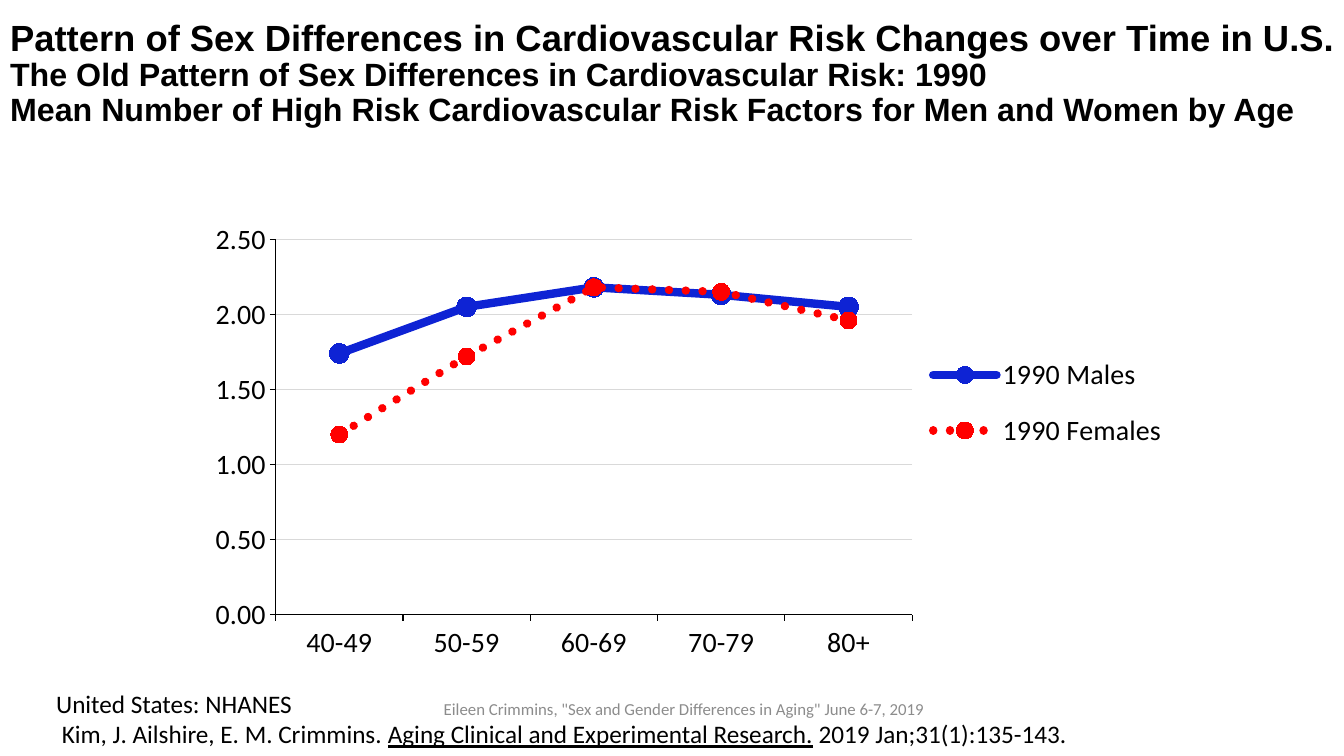
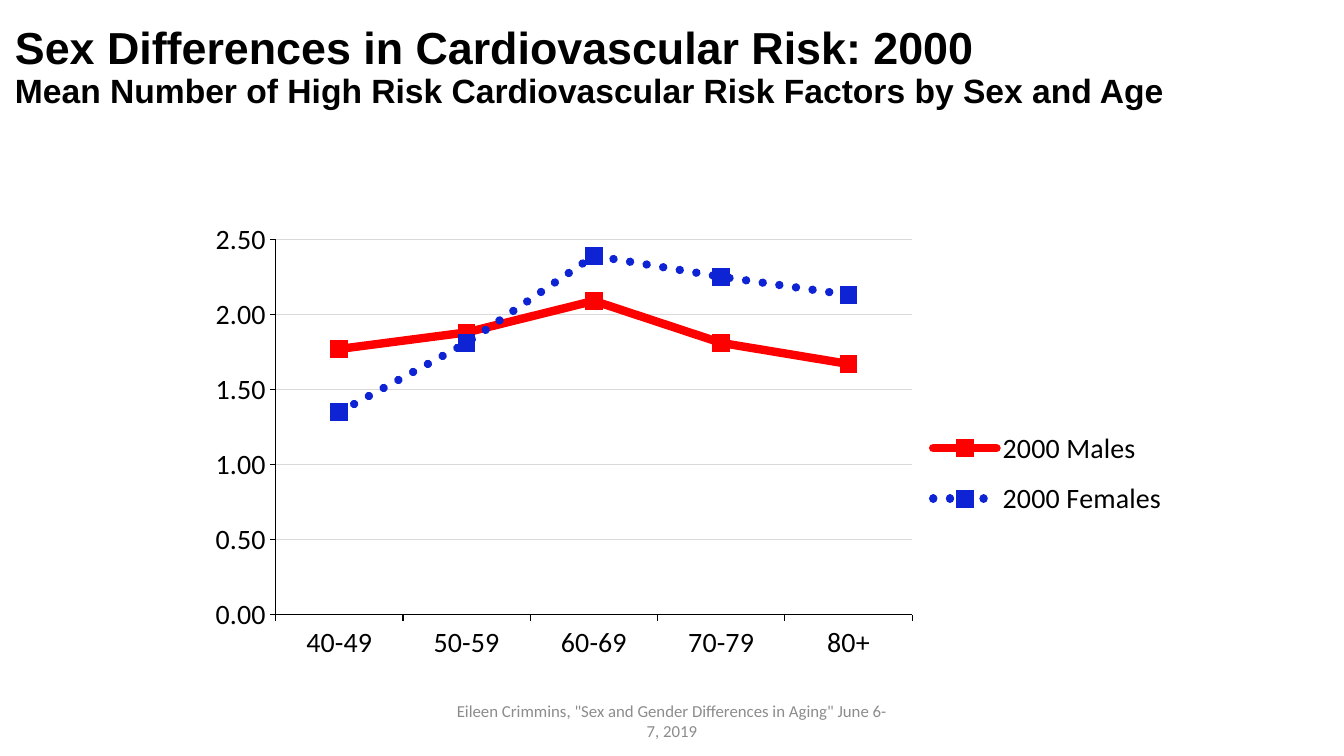
from copy import deepcopy

from pptx import Presentation
from pptx.chart.data import CategoryChartData
from pptx.dml.color import RGBColor
from pptx.enum.chart import XL_CHART_TYPE, XL_LEGEND_POSITION, XL_MARKER_STYLE, XL_TICK_MARK
from pptx.enum.dml import MSO_LINE
from pptx.enum.text import MSO_ANCHOR, MSO_AUTO_SIZE, PP_ALIGN
from pptx.oxml.ns import qn
from pptx.oxml.xmlchemy import OxmlElement
from pptx.util import Pt

BLACK = RGBColor(0x00, 0x00, 0x00)
GRAY = RGBColor(0x8C, 0x8C, 0x8C)
PALE = RGBColor(0xD9, 0xD9, 0xD9)
BLUE = RGBColor(0x0E, 0x23, 0xD4)
RED = RGBColor(0xFF, 0x00, 0x00)
HEAD = "Arial"
BODY = "Calibri"
AGES = ["40-49", "50-59", "60-69", "70-79", "80+"]
CHART = (154, 153.5, 690.5, 348.5)
PLOT = (0.06, 0.05, 0.66, 0.77)
CREDIT = 'Eileen Crimmins, "Sex and Gender Differences in Aging" June 6-7, 2019'


def style(font, size, color=BLACK, face=BODY):
    font.size = Pt(size)
    font.name = face
    font.color.rgb = color


def add_run(para, text, size, color=BLACK, face=BODY):
    run = para.add_run()
    run.text = text
    style(run.font, size, color, face)
    return run


def add_title(slide, box, lines):
    title = slide.shapes.title
    title.left, title.top, title.width, title.height = map(Pt, box)
    frame = title.text_frame
    frame.auto_size = MSO_AUTO_SIZE.NONE
    frame.vertical_anchor = MSO_ANCHOR.MIDDLE
    para = frame.paragraphs[0]
    para.alignment = PP_ALIGN.LEFT
    para.line_spacing = 0.9
    for spot, (text, size) in enumerate(lines):
        if spot:
            para.add_line_break()
            para._p[-1].append(deepcopy(run._r.rPr))
        run = add_run(para, text, size, face=HEAD)
        run.font.bold = True


def add_box(slide, box, wrap=True):
    frame = slide.shapes.add_textbox(*map(Pt, box)).text_frame
    frame.word_wrap = wrap
    return frame


def add_footer(slide, box):
    frame = add_box(slide, box)
    frame.vertical_anchor = MSO_ANCHOR.MIDDLE
    para = frame.paragraphs[0]
    para.alignment = PP_ALIGN.CENTER
    add_run(para, CREDIT, 12, GRAY)


def add_source(slide):
    frame = add_box(slide, (33, 488, 758, 51), False)
    add_run(frame.paragraphs[0], "United States: NHANES", 18)
    para = frame.add_paragraph()
    add_run(para, " Kim, J. Ailshire, E. M. Crimmins. ", 18)
    add_run(para, "Aging Clinical and Experimental Research.", 18).font.underline = True
    add_run(para, " 2019 Jan;31(1):135-143.", 18)


def place(node, spot, box, inner=False):
    for old in node.findall(qn("c:layout")):
        node.remove(old)
    layout = OxmlElement("c:layout")
    manual = OxmlElement("c:manualLayout")
    layout.append(manual)
    rules = [("layoutTarget", "inner")] if inner else []
    rules += [("xMode", "edge"), ("yMode", "edge")]
    rules += zip("xywh", map(str, box))
    for tag, val in rules:
        item = OxmlElement("c:" + tag)
        item.set("val", val)
        manual.append(item)
    node.insert(spot, layout)


def style_axis(axis):
    axis.major_tick_mark = XL_TICK_MARK.OUTSIDE
    axis.minor_tick_mark = XL_TICK_MARK.NONE
    axis.format.line.color.rgb = BLACK
    axis.format.line.width = Pt(0.75)
    style(axis.tick_labels.font, 20)


def style_line(line, color, mark, size, dots):
    line.smooth = False
    pen = line.format.line
    pen.color.rgb = color
    pen.width = Pt(6)
    if dots:
        pen.dash_style = MSO_LINE.ROUND_DOT
    pen._get_or_add_ln().set("cap", "rnd")
    line.marker.style = mark
    line.marker.size = size
    line.marker.format.fill.solid()
    line.marker.format.fill.fore_color.rgb = color
    line.marker.format.line.color.rgb = color


def add_chart(slide, rows, mark, key):
    data = CategoryChartData(number_format="#,##0.00")
    data.categories = AGES
    for name, vals, color, size in rows:
        data.add_series(name, vals)
    chart = slide.shapes.add_chart(XL_CHART_TYPE.LINE_MARKERS, *map(Pt, CHART), data).chart
    style(chart.font, 10)
    chart.has_title = False
    chart.has_legend = True
    chart.legend.position = XL_LEGEND_POSITION.RIGHT
    chart.legend.include_in_layout = False
    style(chart.legend.font, 20)
    place(chart.legend._element, 1, key)
    plot = chart.plots[0]
    plot.vary_by_categories = False
    place(plot._element.getparent(), 0, PLOT, True)
    style_axis(chart.category_axis)
    scale = chart.value_axis
    style_axis(scale)
    scale.minimum_scale = 0
    scale.maximum_scale = 2.5
    scale.major_unit = 0.5
    scale.tick_labels.number_format = "#,##0.00"
    scale.tick_labels.number_format_is_linked = False
    grid = scale.major_gridlines.format.line
    grid.color.rgb = PALE
    grid.width = Pt(0.75)
    for spot, (line, row) in enumerate(zip(plot.series, rows)):
        style_line(line, row[2], mark, row[3], spot == 1)


def main():
    deck = Presentation()
    deck.slide_width, deck.slide_height = Pt(960), Pt(540)
    layout = deck.slide_layouts[5]

    old = deck.slides.add_slide(layout)
    add_title(old, (0, 1.5, 978.5, 103), [
        ("Pattern of Sex Differences in Cardiovascular Risk Changes over Time in U.S.", 26),
        ("The Old Pattern of Sex Differences in Cardiovascular Risk: 1990", 23),
        ("Mean Number of High Risk Cardiovascular Risk Factors for Men and Women by Age", 23),
    ])
    add_chart(old, [
        ("1990 Males", (1.74, 2.05, 2.18, 2.13, 2.05), BLUE, 14),
        ("1990 Females", (1.20, 1.72, 2.18, 2.15, 1.96), RED, 12),
    ], XL_MARKER_STYLE.CIRCLE, (0.73, 0.25, 0.26, 0.27))
    add_source(old)
    add_footer(old, (277, 492, 423.5, 29))

    new = deck.slides.add_slide(layout)
    add_title(new, (3.5, 0, 990.5, 98), [
        ("Sex Differences in Cardiovascular Risk: 2000", 32),
        ("Mean Number of High Risk Cardiovascular Risk Factors by Sex and Age", 24),
    ])
    add_chart(new, [
        ("2000 Males", (1.77, 1.88, 2.09, 1.81, 1.67), RED, 12),
        ("2000 Females", (1.35, 1.81, 2.39, 2.25, 2.13), BLUE, 12),
    ], XL_MARKER_STYLE.SQUARE, (0.73, 0.41, 0.26, 0.24))
    add_footer(new, (318, 500.5, 324, 29))

    deck.save("out.pptx")


if __name__ == "__main__":
    main()
